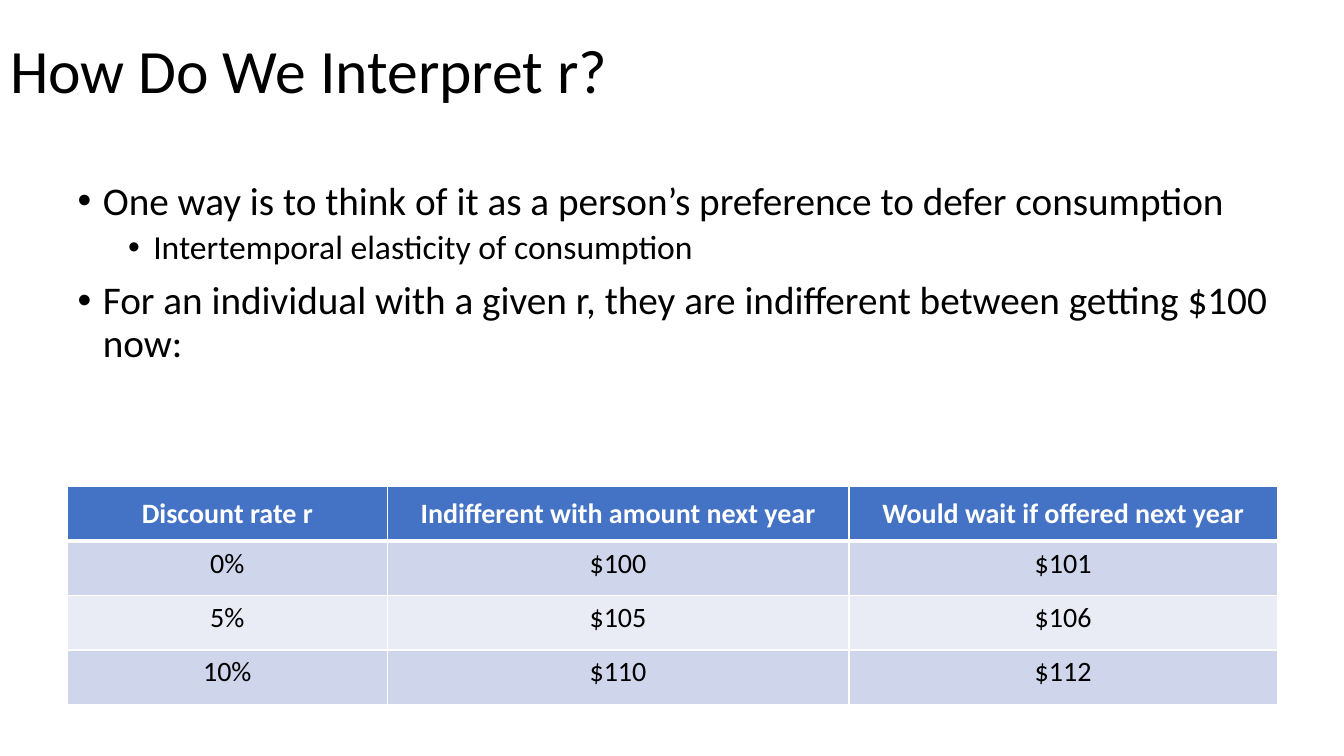
from lxml.etree import SubElement
from pptx import Presentation
from pptx.dml.color import RGBColor
from pptx.enum.text import MSO_ANCHOR, MSO_AUTO_SIZE, PP_ALIGN
from pptx.oxml.ns import qn
from pptx.util import Inches, Pt

TITLE = "How Do We Interpret r?"
BULLETS = [
    (0, "One way is to think of it as a person’s preference to defer consumption"),
    (1, "Intertemporal elasticity of consumption"),
    (0, "For an individual with a given r, they are indifferent between getting $100 now:"),
]
RATES = [
    ("Discount rate r", "Indifferent with amount next year", "Would wait if offered next year"),
    ("0%", "$100", "$101"),
    ("5%", "$105", "$106"),
    ("10%", "$110", "$112"),
]
COLUMN_WIDTHS = (3.17, 4.58, 4.25)
ROW_HEIGHT = 0.54
COLORS = {"text": "000000", "white": "FFFFFF", "header": "4472C4",
          "odd": "CFD5EA", "even": "E9EBF5"}
LEVELS = [
    {"size": 28, "before": 10, "indent": 0.25},
    {"size": 24, "before": 5, "indent": 0.75},
]
HANGING = 0.25


def place(shape, left, top, width, height):
    box = {"left": left, "top": top, "width": width, "height": height}
    for name, value in box.items():
        setattr(shape, name, Inches(value))


def format_paragraph(paragraph, size, color="text", bold=False, **layout):
    font = {"name": "Calibri", "size": Pt(size), "bold": bold}
    for name, value in font.items():
        setattr(paragraph.font, name, value)
    paragraph.font.color.rgb = RGBColor.from_string(COLORS[color])
    for name, value in layout.items():
        setattr(paragraph, name, value)


def add_bullet(paragraph, indent):
    properties = paragraph._p.get_or_add_pPr()
    properties.set("marL", str(Inches(indent)))
    properties.set("indent", str(-Inches(HANGING)))
    SubElement(properties, qn("a:buFont"), typeface="Arial")
    SubElement(properties, qn("a:buChar"), char="•")


def fill_cell(cell, color, bottom_width):
    """Draw white borders, then the fill, in the order the schema asks for."""
    properties = cell._tc.get_or_add_tcPr()
    for side, width in (("L", 1), ("R", 1), ("T", 1), ("B", bottom_width)):
        line = SubElement(properties, qn(f"a:ln{side}"), w=str(Pt(width)))
        solid = SubElement(line, qn("a:solidFill"))
        SubElement(solid, qn("a:srgbClr"), val=COLORS["white"])
    cell.fill.solid()
    cell.fill.fore_color.rgb = RGBColor.from_string(COLORS[color])


def add_title(slide):
    title = slide.shapes.title
    place(title, 0, 0, 12.42, 1.45)
    frame = title.text_frame
    frame.text = TITLE
    frame.auto_size = MSO_AUTO_SIZE.NONE
    frame.vertical_anchor = MSO_ANCHOR.MIDDLE
    format_paragraph(frame.paragraphs[0], 44, alignment=PP_ALIGN.LEFT, line_spacing=0.9)


def add_bullets(slide):
    body = slide.placeholders[1]
    place(body, 0.67, 1.75, 12, 2.91)
    frame = body.text_frame
    frame.text = "\n".join(text for _, text in BULLETS)
    frame.auto_size = MSO_AUTO_SIZE.NONE
    for paragraph, (level, _) in zip(frame.paragraphs, BULLETS):
        style = LEVELS[level]
        format_paragraph(paragraph, style["size"], level=level, line_spacing=0.9,
                         space_before=Pt(style["before"]))
        add_bullet(paragraph, style["indent"])


def add_rate_table(slide):
    table = slide.shapes.add_table(
        len(RATES), len(COLUMN_WIDTHS), Inches(0.67), Inches(4.83),
        Inches(sum(COLUMN_WIDTHS)), Inches(ROW_HEIGHT * len(RATES))).table
    for column, width in zip(table.columns, COLUMN_WIDTHS):
        column.width = Inches(width)
    for row_index, values in enumerate(RATES):
        header = row_index == 0
        fill = "header" if header else ("even", "odd")[row_index % 2]
        for column_index, value in enumerate(values):
            cell = table.cell(row_index, column_index)
            cell.text = value
            cell.vertical_anchor = MSO_ANCHOR.MIDDLE if header else MSO_ANCHOR.TOP
            format_paragraph(cell.text_frame.paragraphs[0], 20,
                             "white" if header else "text", header,
                             alignment=PP_ALIGN.CENTER)
            fill_cell(cell, fill, 3 if header else 1)


def main():
    presentation = Presentation()
    presentation.slide_width = Inches(13.33)
    presentation.slide_height = Inches(7.5)
    slide = presentation.slides.add_slide(presentation.slide_layouts[1])
    add_title(slide)
    add_bullets(slide)
    add_rate_table(slide)
    presentation.save("out.pptx")


if __name__ == "__main__":
    main()
